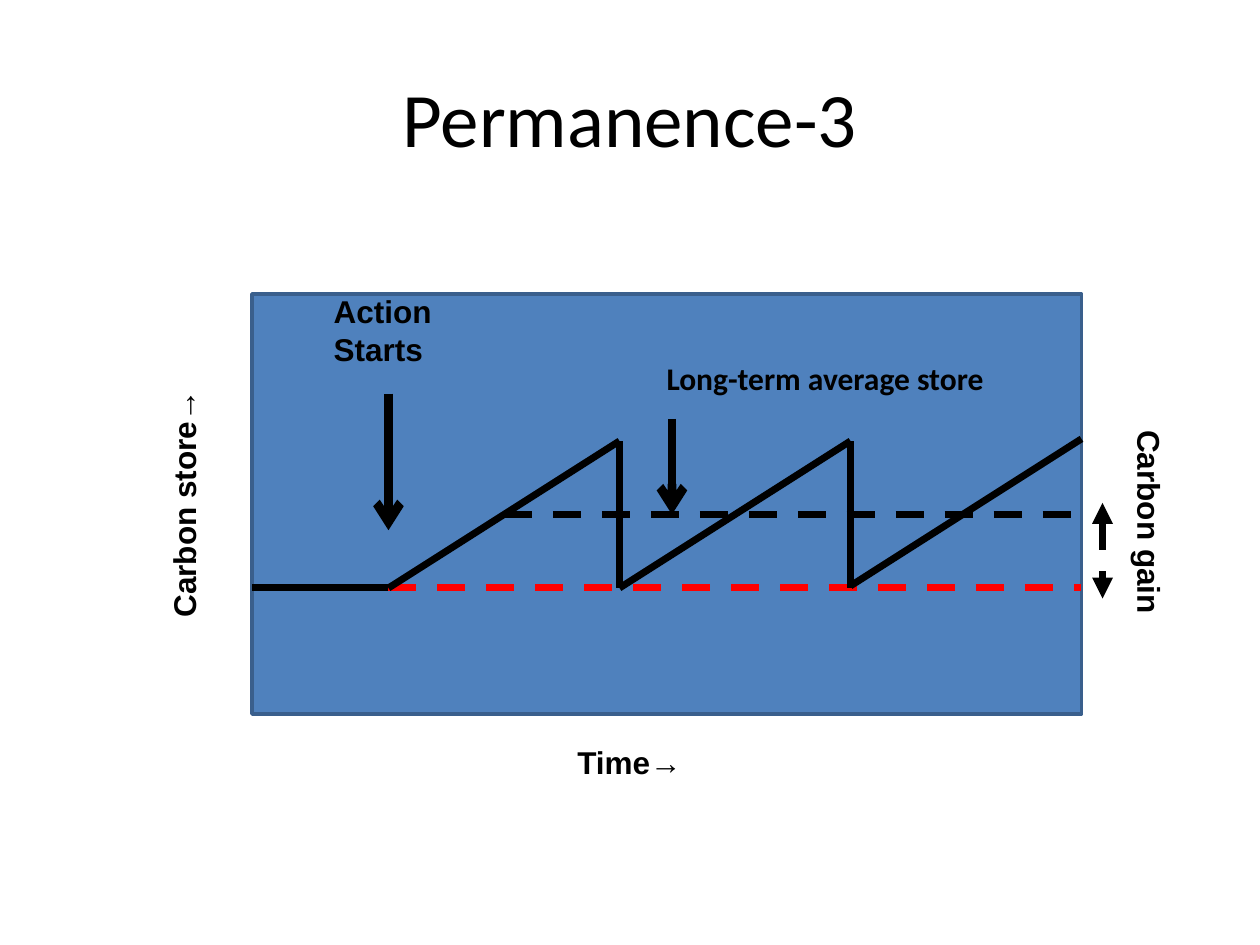
import pptx
import pptx.dml.color
import pptx.enum.dml
import pptx.enum.shapes
import pptx.enum.text
import pptx.util
from pptx.oxml.ns import qn
from lxml import etree

COLORS = {"ink": "000000", "plot": "4F81BD", "border": "3A5F8C", "baseline": "FF0000"}
COLUMNS, ROWS = 120, 90


def rgb(name):
    return pptx.dml.color.RGBColor.from_string(COLORS[name])


def write_text(frame, text, size=18, font="Arial", bold=True, align=None):
    """Write one paragraph per line of text, all in the same format."""
    for index, line in enumerate(text.split("\n")):
        paragraph = frame.paragraphs[0] if index == 0 else frame.add_paragraph()
        paragraph.alignment = align
        run = paragraph.add_run()
        run.text = line
        run.font.size = pptx.util.Pt(size)
        run.font.name = font
        run.font.bold = bold
        run.font.color.rgb = rgb("ink")


class Diagram:
    """Places elements on a grid of COLUMNS by ROWS over the slide."""

    def __init__(self, deck):
        self.column = deck.slide_width / COLUMNS
        self.row = deck.slide_height / ROWS
        self.slide = deck.slides.add_slide(deck.slide_layouts[5])

    def place(self, *lengths):
        return [round(length * (self.row if index % 2 else self.column))
                for index, length in enumerate(lengths)]

    def title(self, text, *box):
        title = self.slide.shapes.title
        title.left, title.top, title.width, title.height = self.place(*box)
        title.text_frame.vertical_anchor = pptx.enum.text.MSO_ANCHOR.MIDDLE
        write_text(title.text_frame, text, size=44, font="Calibri", bold=False,
                   align=pptx.enum.text.PP_ALIGN.CENTER)

    def panel(self, *box):
        panel = self.slide.shapes.add_shape(
            pptx.enum.shapes.MSO_SHAPE.RECTANGLE, *self.place(*box))
        panel.shadow.inherit = False
        panel.fill.solid()
        panel.fill.fore_color.rgb = rgb("plot")
        panel.line.color.rgb = rgb("border")
        panel.line.width = pptx.util.Pt(2)

    def label(self, text, *box, rotation=0, **text_format):
        label = self.slide.shapes.add_textbox(*self.place(*box))
        label.rotation = rotation
        label.text_frame.word_wrap = False
        label.text_frame.auto_size = pptx.enum.text.MSO_AUTO_SIZE.SHAPE_TO_FIT_TEXT
        write_text(label.text_frame, text, **text_format)

    def line(self, start, end, color="ink", width=4, dashed=False, head=None, tail=None):
        line = self.slide.shapes.add_connector(
            pptx.enum.shapes.MSO_CONNECTOR.STRAIGHT, *self.place(*start, *end))
        line.line.color.rgb = rgb(color)
        line.line.width = pptx.util.Pt(width)
        if dashed:
            line.line.dash_style = pptx.enum.dml.MSO_LINE.DASH
        outline = line.line._get_or_add_ln()
        for tag, arrowhead in (("a:headEnd", head), ("a:tailEnd", tail)):
            if arrowhead:
                etree.SubElement(outline, qn(tag), type=arrowhead)
        etree.SubElement(line._element.spPr, qn("a:effectLst"))


def main():
    deck = pptx.Presentation()
    deck.slide_width = pptx.util.Inches(10)
    deck.slide_height = pptx.util.Inches(7.5)
    diagram = Diagram(deck)
    diagram.title("Permanence-3", 6, 3.6, 108, 15)

    # Plot area and axis labels
    left, right = 24, 103
    diagram.panel(left, 28, right - left, 40)
    diagram.label("Time→", 53.8, 70.2, 12.4, 4.8)
    diagram.label("Carbon store→", 5.4, 45.5, 24.2, 4.8, rotation=270)

    # Store before the action, and the baseline after it
    start, cycle = 37, 22
    peak, average, base = 42, 49, 56
    diagram.line((left, base), (start, base))
    diagram.line((start, base), (right, base), color="baseline", dashed=True)

    # Growth and harvest cycles, the last one still growing
    harvests = [start + cycle, start + 2 * cycle]
    for harvest in harvests:
        diagram.line((harvest - cycle, base), (harvest, peak))
        diagram.line((harvest, peak), (harvest, base))
    diagram.line((harvests[-1], base - 0.2), (right, peak - 0.2))

    # Start of the action
    diagram.label("Action\nStarts", 30.6, 27.2, 12.7, 8.5)
    diagram.line((start, 37.5), (start, 50.5), width=5, tail="arrow")

    # Long-term average
    diagram.line((48, average), (right, average), dashed=True)
    diagram.label("Long-term average store", 62.3, 33.6, 32.9, 4.8, font="Calibri")
    diagram.line((64, 39.9), (64, average), width=5, tail="arrow")

    # Gain over the baseline
    diagram.label("Carbon gain", 99.4, 47.5, 20.2, 4.8, rotation=90)
    diagram.line((105, 47.9), (105, 57), dashed=True, head="triangle", tail="triangle")

    deck.save("out.pptx")


if __name__ == "__main__":
    main()
